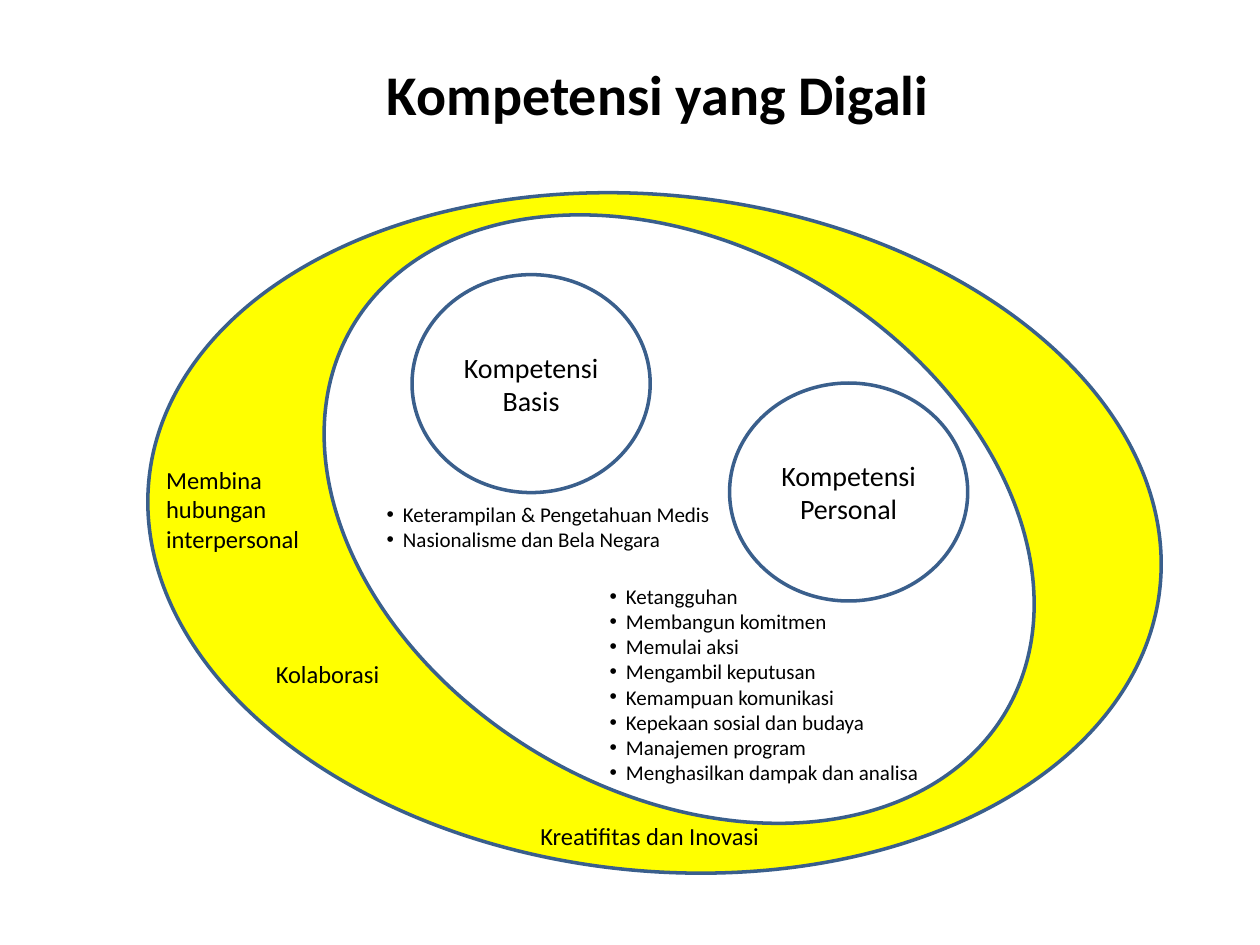
from lxml import etree
from pptx import Presentation
from pptx.dml.color import RGBColor
from pptx.enum.shapes import MSO_SHAPE
from pptx.enum.text import MSO_ANCHOR, MSO_AUTO_SIZE, PP_ALIGN
from pptx.oxml.ns import qn
from pptx.util import Inches, Pt

OVAL = MSO_SHAPE.OVAL
TOP, MIDDLE = MSO_ANCHOR.TOP, MSO_ANCHOR.MIDDLE
LEFT, CENTER = PP_ALIGN.LEFT, PP_ALIGN.CENTER
NO_FIT = MSO_AUTO_SIZE.NONE

FONT = "Calibri"
COLORS = {"outer": "FFFF00", "inner": "FFFFFF", "outline": "3A5F8C", "text": "000000"}
CIRCLE_WIDTH, CIRCLE_HEIGHT = 1.89, 1.73
BULLET_INDENT = 0.13

BASIC_SKILLS = ["Keterampilan & Pengetahuan Medis", "Nasionalisme dan Bela Negara"]
PERSONAL_SKILLS = [
    "Ketangguhan",
    "Membangun komitmen",
    "Memulai aksi",
    "Mengambil keputusan",
    "Kemampuan komunikasi",
    "Kepekaan sosial dan budaya",
    "Manajemen program",
    "Menghasilkan dampak dan analisa",
]


def rgb(name):
    return RGBColor.from_string(COLORS[name])


def write(frame, lines, size, align=LEFT, anchor=TOP, bold=False):
    """Fill a text frame with one paragraph per line."""
    frame.auto_size = NO_FIT
    frame.vertical_anchor = anchor
    frame.text = "\n".join(lines)
    for paragraph in frame.paragraphs:
        paragraph.alignment = align
        font = paragraph.font
        font.name, font.size, font.bold = FONT, Pt(size), bold
        font.color.rgb = rgb("text")


def add_bullet(paragraph):
    properties = paragraph._p.get_or_add_pPr()
    properties.set("marL", str(Inches(BULLET_INDENT)))
    properties.set("indent", str(-Inches(BULLET_INDENT)))
    font = etree.Element(qn("a:buFont"), typeface="Arial")
    mark = etree.Element(qn("a:buChar"), char="•")
    properties.extend([font, mark])


def add_ellipse(slide, box, fill, rotation=0):
    ellipse = slide.shapes.add_shape(OVAL, *map(Inches, box))
    ellipse.rotation = rotation
    ellipse.shadow.inherit = False
    ellipse.fill.solid()
    ellipse.fill.fore_color.rgb = rgb(fill)
    ellipse.line.color.rgb = rgb("outline")
    ellipse.line.width = Pt(2)
    return ellipse


def add_label(slide, box, lines, size=14):
    frame = slide.shapes.add_textbox(*map(Inches, box)).text_frame
    frame.word_wrap = True
    write(frame, lines, size)
    return frame


def add_competency(slide, left, top, name, skills, skills_offset, skills_height):
    """Circle with its name, and a bullet list offset from the circle's corner."""
    circle = add_ellipse(slide, (left, top, CIRCLE_WIDTH, CIRCLE_HEIGHT), "inner")
    write(circle.text_frame, [name], 16, CENTER, MIDDLE)
    dx, dy = skills_offset
    frame = add_label(slide, (left + dx, top + dy, 3.54, skills_height), skills, 12)
    for paragraph in frame.paragraphs:
        add_bullet(paragraph)


def add_title(slide, box, text):
    title = slide.shapes.title
    title.left, title.top, title.width, title.height = map(Inches, box)
    write(title.text_frame, [text], 32, bold=True)
    title.text_frame.word_wrap = False


def add_diagram(slide, left, top):
    """Nested ellipses, with the two competencies inside and the shared ones around."""
    add_ellipse(slide, (left, top, 8.07, 5.36), "outer", 6.3)
    add_ellipse(slide, (left + 1.22, top + 0.4, 6.02, 4.34), "inner", 30.5)
    add_competency(slide, left + 2.11, top + 0.63, "Kompetensi Basis",
                   BASIC_SKILLS, (-0.3, 1.75), 0.51)
    add_competency(slide, left + 4.63, top + 1.49, "Kompetensi Personal",
                   PERSONAL_SKILLS, (-1.05, 1.54), 1.72)
    add_label(slide, (left + 0.06, top + 2.09, 3.94, 0.81),
              ["Membina", "hubungan", "interpersonal"])
    add_label(slide, (left + 3.03, top + 4.92, 3.33, 0.34), ["Kreatifitas dan Inovasi"])
    add_label(slide, (left + 0.93, top + 3.63, 1.18, 0.34), ["Kolaborasi"])


def main():
    deck = Presentation()
    deck.slide_width, deck.slide_height = Inches(10), Inches(7.5)
    slide = deck.slides.add_slide(deck.slide_layouts.get_by_name("Title Only"))
    add_title(slide, (2.97, 0.42, 4.57, 0.64), "Kompetensi yang Digali")
    add_diagram(slide, 1.16, 1.55)
    deck.save("out.pptx")


if __name__ == "__main__":
    main()
